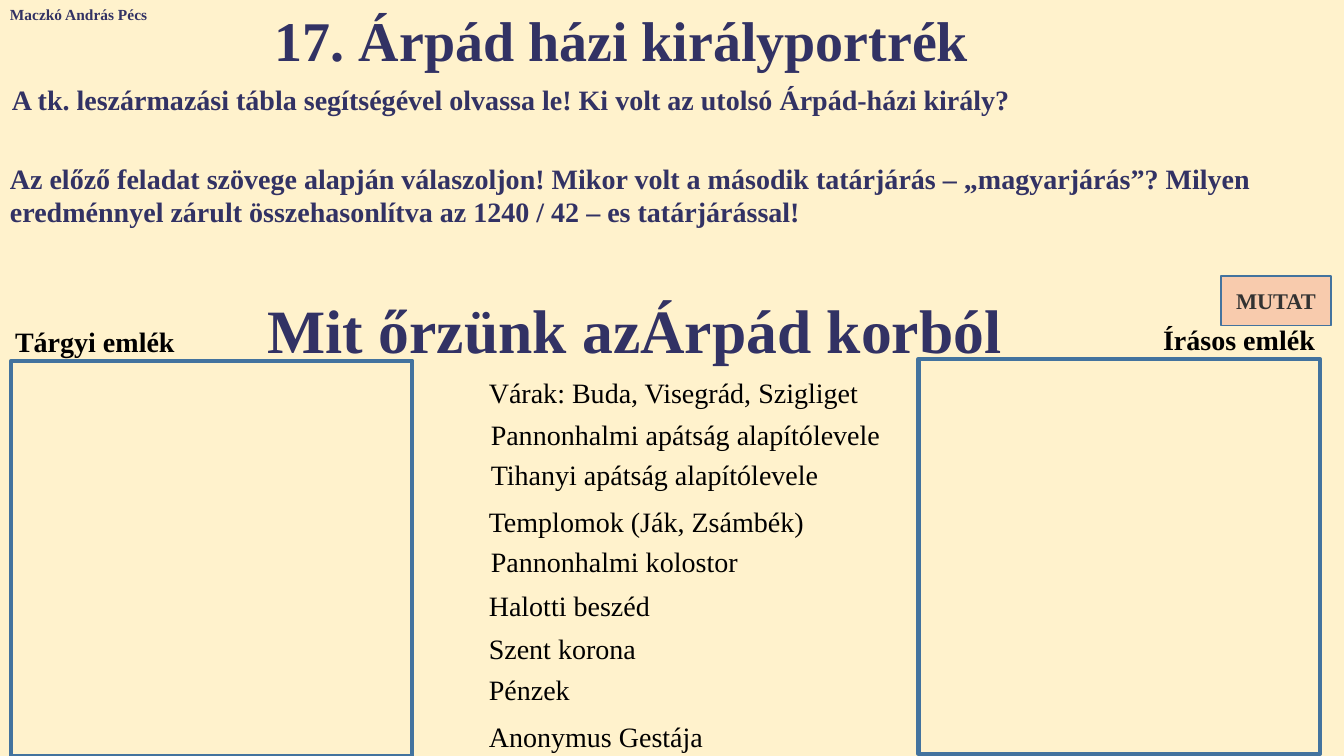
from pptx import Presentation
from pptx.dml.color import RGBColor
from pptx.enum.shapes import MSO_SHAPE
from pptx.enum.text import MSO_ANCHOR, PP_ALIGN
from pptx.util import Inches, Pt

RECTANGLE = MSO_SHAPE.RECTANGLE
TOP, MIDDLE = MSO_ANCHOR.TOP, MSO_ANCHOR.MIDDLE
LEFT, CENTER = PP_ALIGN.LEFT, PP_ALIGN.CENTER
TITLE_ONLY = 5

CREAM, PEACH, BLUE = "FFF2CC", "F8CBAD", "43739E"
NAVY, BLACK, CHARCOAL = "323264", "000000", "323232"

LINE_HEIGHT = 5.87
MEMORIES = [
    ("Várak: Buda, Visegrád, Szigliget", 35.63, 49.07, 30.7),
    ("Pannonhalmi apátság alapítólevele", 35.78, 54.53, 30.7),
    ("Tihanyi apátság alapítólevele", 35.78, 59.87, 30.7),
    ("Templomok (Ják, Zsámbék)", 35.63, 66.13, 30.7),
    ("Pannonhalmi kolostor", 35.78, 71.33, 20.63),
    ("Halotti beszéd", 35.63, 77.2, 17.85),
    ("Szent korona", 35.63, 82.93, 17.85),
    ("Pénzek", 35.63, 88.27, 10.05),
    ("Anonymus Gestája", 35.63, 94.53, 23.7),
]


def color(code):
    return RGBColor.from_string(code)


class Worksheet:
    font = "Times New Roman"

    def __init__(self, presentation):
        self.width = presentation.slide_width
        self.height = presentation.slide_height
        self.slide = presentation.slides.add_slide(presentation.slide_layouts[TITLE_ONLY])
        background = self.slide.background.fill
        background.solid()
        background.fore_color.rgb = color(CREAM)

    def place(self, left, top, width, height):
        return (
            round(self.width * left / 100),
            round(self.height * top / 100),
            round(self.width * width / 100),
            round(self.height * height / 100),
        )

    def letter(self, shape, words, size, ink, bold=True, align=LEFT, anchor=TOP, wrap=True):
        frame = shape.text_frame
        frame.text = words
        frame.word_wrap = wrap
        frame.vertical_anchor = anchor
        paragraph = frame.paragraphs[0]
        paragraph.alignment = align
        paragraph.line_spacing = 1.0
        font = paragraph.runs[0].font
        font.name = self.font
        font.size = Pt(size)
        font.bold = bold
        font.color.rgb = color(ink)

    def title(self, words, area, size):
        heading = self.slide.shapes.title
        heading.left, heading.top, heading.width, heading.height = self.place(*area)
        self.letter(heading, words, size, NAVY, align=CENTER)

    def text(self, words, area, size=20, ink=NAVY, **style):
        box = self.slide.shapes.add_textbox(*self.place(*area))
        self.letter(box, words, size, ink, **style)

    def panel(self, area, fill, weight):
        panel = self.slide.shapes.add_shape(RECTANGLE, *self.place(*area))
        panel.shadow.inherit = False
        panel.fill.solid()
        panel.fill.fore_color.rgb = color(fill)
        panel.line.color.rgb = color(BLUE)
        panel.line.width = Pt(weight)
        return panel

    def button(self, words, area):
        button = self.panel(area, PEACH, 1)
        self.letter(button, words, 16, CHARCOAL, align=CENTER, anchor=MIDDLE)


def main():
    presentation = Presentation()
    presentation.slide_width = Inches(13.33)
    presentation.slide_height = Inches(7.5)
    sheet = Worksheet(presentation)

    sheet.title("17. Árpád házi királyportrék", (11.93, 0, 68.64, 10.27), 40)
    sheet.text("Maczkó András Pécs", (0, 0, 11.93, 3.87), 11)
    sheet.text(
        "A tk. leszármazási tábla segítségével olvassa le! "
        "Ki volt az utolsó Árpád-házi király?",
        (0.15, 10.27, 99.17, LINE_HEIGHT),
    )
    sheet.text(
        "Az előző feladat szövege alapján válaszoljon! "
        "Mikor volt a második tatárjárás – „magyarjárás”? "
        "Milyen eredménnyel zárult összehasonlítva az 1240 / 42 – es tatárjárással!",
        (0, 20.67, 100, 10.27),
    )
    sheet.text("Mit őrzünk azÁrpád korból", (18.9, 38, 56.7, 11.2), 44, align=CENTER, wrap=False)

    for left, top in ((0.83, 47.73), (68.34, 47.47)):
        sheet.panel((left, top, 29.86, 52.27), CREAM, 3)
    sheet.text("Tárgyi emlék", (0.38, 42.27, 18.53, LINE_HEIGHT), ink=BLACK)
    sheet.text("Írásos emlék", (85.8, 42, 13.2, LINE_HEIGHT), ink=BLACK)
    sheet.button("MUTAT", (90.85, 36.53, 8.18, 6.53))

    for memory, left, top, width in MEMORIES:
        sheet.text(memory, (left, top, width, LINE_HEIGHT), ink=BLACK, bold=False)

    presentation.save("out.pptx")


if __name__ == "__main__":
    main()
